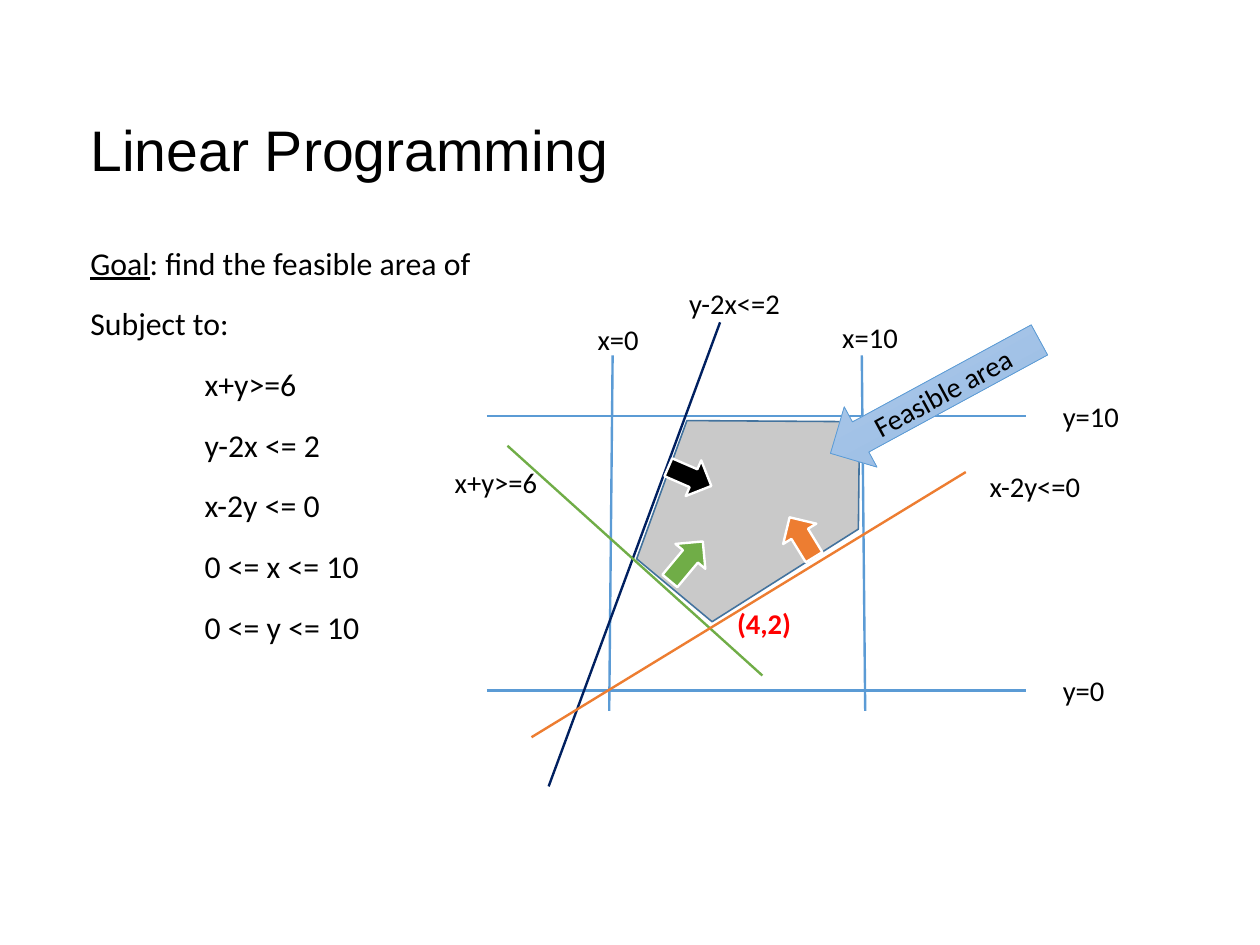
from dataclasses import dataclass

from lxml.etree import SubElement
from pptx import Presentation
from pptx.dml.color import RGBColor
from pptx.enum.shapes import MSO_CONNECTOR, MSO_SHAPE
from pptx.enum.text import MSO_ANCHOR, MSO_AUTO_SIZE, PP_ALIGN
from pptx.oxml.ns import qn
from pptx.util import Cm, Inches, Pt


@dataclass(frozen=True)
class Theme:
    black: str = "000000"
    white: str = "FFFFFF"
    red: str = "FF0000"
    axis: str = "5B9BD5"
    navy: str = "002060"
    green: str = "70AD47"
    orange: str = "ED7D31"
    region: str = "C9C9C9"
    region_edge: str = "43739E"
    callout_top: str = "B1CBE9"
    callout_bottom: str = "93B9E4"
    title_font: str = "Arial"
    text_font: str = "Calibri"
    title_size: int = 36
    body_size: int = 20
    label_size: int = 18


THEME = Theme()

CONSTRAINTS = ["x+y>=6", "y-2x <= 2", "x-2y <= 0", "0 <= x <= 10", "0 <= y <= 10"]

REGION = [(5.57, 4.89), (6.01, 3.68), (7.52, 3.69), (7.51, 4.63), (6.23, 5.44)]

BOUNDARIES = [
    ((5.36, 3.11), (5.33, 6.22), THEME.axis),
    ((7.54, 3.11), (7.57, 6.22), THEME.axis),
    ((4.26, 3.64), (8.98, 3.64), THEME.axis),
    ((4.26, 6.04), (8.98, 6.04), THEME.axis),
    ((4.8, 6.88), (6.3, 2.82), THEME.navy),
    ((4.44, 3.9), (6.67, 5.91), THEME.green),
    ((4.65, 6.45), (8.45, 4.13), THEME.orange),
]

LABELS = [
    ("x=0", 5.13, 2.77, 0.56),
    ("x=10", 7.27, 2.75, 0.69),
    ("y=10", 9.2, 3.44, 0.7),
    ("y=0", 9.2, 5.84, 0.7),
    ("y-2x<=2", 5.93, 2.45, 1.01),
    ("x+y>=6", 3.88, 4.02, 0.93),
    ("x-2y<=0", 8.56, 4.05, 1.01),
]

SIDE_ARROWS = [
    (5.83, 4, 0.41, 23.5, THEME.black),
    (5.78, 4.74, 0.45, 309.8, THEME.green),
    (6.81, 4.53, 0.41, 238.5, THEME.orange),
]


def rgb(color):
    return RGBColor.from_string(color)


def style_font(font, size, color=THEME.black, name=THEME.text_font, bold=False):
    font.name = name
    font.size = Pt(size)
    font.color.rgb = rgb(color)
    font.bold = bold


def style_line(line, color, width):
    line.color.rgb = rgb(color)
    line.width = Pt(width)


def add_text_box(page, left, top, width, height):
    box = page.shapes.add_textbox(Inches(left), Inches(top), Inches(width), Inches(height))
    frame = box.text_frame
    frame.word_wrap = True
    frame.margin_left = frame.margin_right = frame.margin_top = frame.margin_bottom = 0
    return frame


def add_title(page, text):
    frame = add_text_box(page, 0.79, 0.74, 9.25, 1.12)
    frame.vertical_anchor = MSO_ANCHOR.MIDDLE
    frame.text = text
    style_font(frame.paragraphs[0].runs[0].font, THEME.title_size, name=THEME.title_font)


def add_problem(page):
    frame = add_text_box(page, 0.79, 2.13, 9.68, 5.21)
    frame.text = "\n".join(["Goal", "Subject to:", *CONSTRAINTS])
    goal = frame.paragraphs[0]
    goal.runs[0].font.underline = True
    goal.add_run().text = ": find the feasible area of"
    for para in frame.paragraphs:
        para.space_after = Pt(14.2)
        for span in para.runs:
            style_font(span.font, THEME.body_size)
    for para in frame.paragraphs[2:]:
        properties = para._p.get_or_add_pPr()
        properties.set("marL", str(Inches(1)))
        properties.set("indent", "0")


def add_label(page, text, left, top, width, color=THEME.black, bold=False):
    box = page.shapes.add_textbox(Inches(left), Inches(top), Inches(width), Inches(0.4))
    frame = box.text_frame
    frame.word_wrap = False
    frame.auto_size = MSO_AUTO_SIZE.SHAPE_TO_FIT_TEXT
    frame.text = text
    style_font(frame.paragraphs[0].runs[0].font, THEME.label_size, color, bold=bold)


def add_region(page):
    corners = [(Inches(x), Inches(y)) for x, y in REGION]
    builder = page.shapes.build_freeform(*corners[0])
    builder.add_line_segments(corners[1:], close=True)
    region = builder.convert_to_shape()
    region.shadow.inherit = False
    region.fill.solid()
    region.fill.fore_color.rgb = rgb(THEME.region)
    style_line(region.line, THEME.region_edge, 1)


def add_boundary(page, start, end, color):
    points = [Inches(value) for value in (*start, *end)]
    boundary = page.shapes.add_connector(MSO_CONNECTOR.STRAIGHT, *points)
    style_line(boundary.line, color, 1.5)
    SubElement(boundary._element.spPr, qn("a:effectLst"))


def add_arrow(page, preset, left, top, width, height, rotation):
    arrow = page.shapes.add_shape(
        preset, Inches(left), Inches(top), Inches(width), Inches(height)
    )
    arrow.rotation = rotation
    arrow.shadow.inherit = False
    return arrow


def add_side_arrow(page, left, top, width, rotation, color):
    arrow = add_arrow(page, MSO_SHAPE.RIGHT_ARROW, left, top, width, 0.34, rotation)
    arrow.fill.solid()
    arrow.fill.fore_color.rgb = rgb(color)
    style_line(arrow.line, THEME.white, 1.5)


def add_callout(page, text):
    arrow = add_arrow(page, MSO_SHAPE.LEFT_ARROW, 7.14, 3.17, 2.08, 0.6, 331.5)
    arrow.fill.gradient()
    arrow.fill.gradient_angle = 270
    colors = (THEME.callout_top, THEME.callout_bottom)
    for stop, color in zip(arrow.fill.gradient_stops, colors):
        stop.color.rgb = rgb(color)
    style_line(arrow.line, THEME.axis, 0.5)
    frame = arrow.text_frame
    frame.vertical_anchor = MSO_ANCHOR.MIDDLE
    frame.text = text
    para = frame.paragraphs[0]
    para.alignment = PP_ALIGN.CENTER
    style_font(para.runs[0].font, THEME.label_size)


def main():
    deck = Presentation()
    deck.slide_width = Cm(28)
    deck.slide_height = Cm(21)
    page = deck.slides.add_slide(deck.slide_layouts[6])
    add_region(page)
    add_title(page, "Linear Programming")
    add_problem(page)
    for boundary in BOUNDARIES:
        add_boundary(page, *boundary)
    for label in LABELS:
        add_label(page, *label)
    for arrow in SIDE_ARROWS:
        add_side_arrow(page, *arrow)
    add_callout(page, "Feasible area")
    add_label(page, "(4,2)", 6.35, 5.25, 0.68, THEME.red, bold=True)
    deck.save("out.pptx")


if __name__ == "__main__":
    main()
